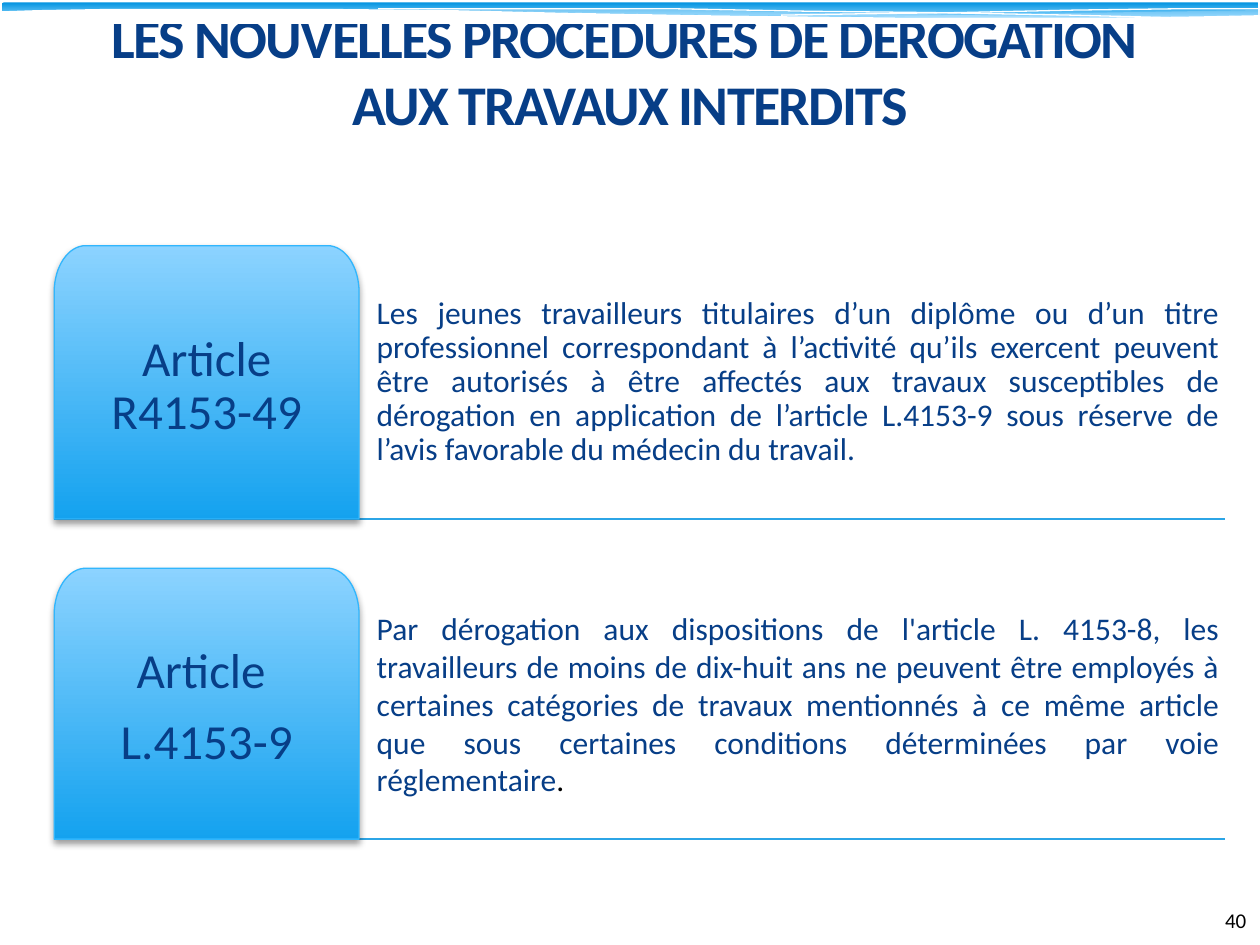
from math import cos, pi, sin

from lxml import etree
from pptx import Presentation
from pptx.dml.color import RGBColor
from pptx.enum.shapes import MSO_CONNECTOR, MSO_SHAPE
from pptx.enum.text import MSO_ANCHOR, PP_ALIGN
from pptx.oxml.ns import qn
from pptx.util import Inches, Pt

LEFT, RIGHT = Inches(0.43), Inches(9.72)
TAB_W, TEXT_X, TEXT_W = Inches(2.42), Inches(2.95), Inches(6.77)
CENTER, JUSTIFY, END = PP_ALIGN.CENTER, PP_ALIGN.JUSTIFY, PP_ALIGN.RIGHT
MIDDLE = MSO_ANCHOR.MIDDLE
ROUNDED, STRAIGHT = MSO_SHAPE.ROUNDED_RECTANGLE, MSO_CONNECTOR.STRAIGHT
NAVY, BLACK, WHITE = "073E87", "000000", "FFFFFF"
RULE, TAB_EDGE, PALE = "2CA5E6", "31B6FD", "C6E7FC"

RIBBONS = [
    ([(9.99, 0.08), (9.42, 0.09), (8.79, 0.1), (7.66, 0.12), (6.7, 0.13),
      (7.44, 0.14), (9, 0.14), (9.65, 0.13), (10, 0.12), (10, 0.08)], 29),
    ([(9.13, 0.14), (8.23, 0.13), (7.17, 0.11), (6.36, 0.1), (5.58, 0.08),
      (4.63, 0.07), (2.76, 0.07), (3.56, 0.08), (4.47, 0.1), (5.7, 0.12),
      (6.9, 0.13), (7.74, 0.14)], 40),
]
STREAKS = [
    [(3, 0.07), (5.35, 0.07), (6.43, 0.09), (7.39, 0.1), (8.48, 0.12), (9.28, 0.14)],
    [(6.2, 0.12), (6.81, 0.11), (7.6, 0.1), (8.53, 0.08), (9.31, 0.07), (9.99, 0.07)],
]
WAVE = [(10, 0.12), (9.51, 0.13), (8.8, 0.14), (7.18, 0.14), (6.32, 0.13),
        (5.57, 0.12), (4.44, 0.1), (3.58, 0.08), (2.59, 0.07), (0.87, 0.07),
        (0.3, 0.08), (0, 0.09), (0, 0.19), (10, 0.19)]

ARTICLES = [
    (1.95, 2.17, ["Article R4153-49"], 0.9, 0.35,
     [("Les jeunes travailleurs titulaires d’un diplôme ou d’un titre "
       "professionnel correspondant à l’activité qu’ils exercent peuvent être "
       "autorisés à être affectés aux travaux susceptibles de dérogation en "
       "application de l’article L.4153-9 sous réserve de l’avis favorable du "
       "médecin du travail.", NAVY)]),
    (4.51, 2.15, ["Article ", "L.4153-9"], 1.0, 0,
     [("Par dérogation aux dispositions de l'article L. 4153-8, les travailleurs "
       "de moins de dix-huit ans ne peuvent être employés à certaines catégories "
       "de travaux mentionnés à ce même article que sous certaines conditions "
       "déterminées par voie réglementaire", NAVY), (".", BLACK)]),
]


def rgb(value):
    return RGBColor.from_string(value)


class Deck:
    font = "Calibri"

    def __init__(self, prs):
        self.prs = prs
        self.s = prs.slides.add_slide(prs.slide_layouts[5])

    def run(self, p, text, size, color=NAVY, bold=False):
        r = p.add_run()
        r.text = text
        r.font.name, r.font.size, r.font.bold = self.font, Pt(size), bold
        r.font.color.rgb = rgb(color)
        return r

    def paragraphs(self, sp, paragraphs, size, align, margins, spacing=1.0, after=0):
        tf = sp.text_frame
        tf.word_wrap, tf.vertical_anchor = True, MIDDLE
        tf.margin_left, tf.margin_top, tf.margin_right, tf.margin_bottom = map(Inches, margins)
        for i, runs in enumerate(paragraphs):
            p = tf.add_paragraph() if i else tf.paragraphs[0]
            p.alignment, p.line_spacing, p.space_after = align, spacing, Pt(size * after)
            for text, color in runs:
                self.run(p, text, size, color)

    def title(self, first, second):
        sp = self.s.shapes.title
        sp.left, sp.top, sp.width, sp.height = 0, Inches(0.36), Inches(10), Inches(0.39)
        tf = sp.text_frame
        tf.word_wrap, tf.vertical_anchor = True, MIDDLE
        p = tf.paragraphs[0]
        p.alignment = CENTER
        runs = [self.run(p, first, 32, bold=True)]
        p.add_line_break()
        runs.append(self.run(p, second, 32, bold=True))
        for r in runs:
            r.font._element.set("spc", "-100")

    def text(self, x, y, w, h, *args, **kwargs):
        self.paragraphs(self.s.shapes.add_textbox(x, y, w, h), *args, **kwargs)

    def gradient(self, sp, top, bottom, end=1.0):
        sp.fill.gradient()
        sp.fill.gradient_angle = 270
        for stop, color, position in zip(sp.fill.gradient_stops, (top, bottom), (0, end)):
            stop.color.rgb, stop.position = rgb(color), position

    def outline(self, points, closed=True):
        pts = [(Inches(x), Inches(y)) for x, y in points]
        builder = self.s.shapes.build_freeform(*pts[0])
        builder.add_line_segments(pts[1:], close=closed)
        sp = builder.convert_to_shape()
        sp.shadow.inherit = False
        sp.fill.background()
        sp.line.fill.background()
        return sp

    def area(self, points, color, alpha=100):
        sp = self.outline(points)
        sp.fill.solid()
        sp.fill.fore_color.rgb = rgb(color)
        clr = sp._element.spPr.find(qn("a:solidFill"))[0]
        etree.SubElement(clr, qn("a:alpha"), val=str(alpha * 1000))

    def streak(self, points):
        sp = self.outline(points, closed=False)
        sp.line.color.rgb, sp.line.width = rgb(WHITE), Pt(0)

    def band(self):
        sp = self.s.shapes.add_shape(ROUNDED, Inches(0.02), Inches(0.02), Inches(9.97), Inches(0.13))
        sp.adjustments[0] = 0.07
        sp.shadow.inherit = False
        sp.line.fill.background()
        self.gradient(sp, "0293E0", "83D3FE", 0.9)

    def rule(self, y):
        c = self.s.shapes.add_connector(STRAIGHT, LEFT, Inches(y), RIGHT, Inches(y))
        c.line.color.rgb, c.line.width = rgb(RULE), Pt(0.75)
        etree.SubElement(c._element.spPr, qn("a:effectLst"))

    def tab(self, y, h, lines):
        x, w, rx, ry = LEFT.inches, TAB_W.inches, 0.25, 0.37
        angles = [i * pi / 32 for i in range(17)]
        left = [(x + rx - rx * cos(a), y + ry - ry * sin(a)) for a in angles]
        right = [(2 * x + w - px, py) for px, py in reversed(left)]
        sp = self.outline(left + right + [(x + w, y + h), (x, y + h)])
        self.gradient(sp, "8CD3FF", "14A2EF")
        sp.line.color.rgb, sp.line.width = rgb(TAB_EDGE), Pt(0.75)
        effects = sp._element.spPr.find(qn("a:effectLst"))
        shadow = etree.SubElement(effects, qn("a:outerShdw"), blurRad=str(Pt(4)),
                                  dist=str(Pt(2)), dir="5400000", rotWithShape="0")
        clr = etree.SubElement(shadow, qn("a:srgbClr"), val=BLACK)
        etree.SubElement(clr, qn("a:alpha"), val="38000")
        self.paragraphs(sp, [[(line, NAVY)] for line in lines], 28, CENTER,
                        (0.13, 0.13, 0.13, 0.06), 0.9, 0.35)


def main():
    prs = Presentation()
    prs.slide_width, prs.slide_height = Inches(10), Inches(7.5)
    deck = Deck(prs)
    deck.band()
    for points, alpha in RIBBONS:
        deck.area(points, PALE, alpha)
    for points in STREAKS:
        deck.streak(points)
    deck.area(WAVE, WHITE)
    deck.text(Inches(7.66), Inches(7.1), Inches(2.33), Inches(0.4),
              [[("40", BLACK)]], 12, END, (0.1, 0.05, 0.1, 0.05))
    for y, h, heading, spacing, after, body in ARTICLES:
        deck.rule(y + h)
        deck.text(TEXT_X, Inches(y), TEXT_W, Inches(h), [body], 18, JUSTIFY,
                  (0.04,) * 4, spacing, after)
        deck.tab(y, h, heading)
    deck.title("LES NOUVELLES PROCÉDURES DE DÉROGATION ", "AUX TRAVAUX INTERDITS")
    prs.save("out.pptx")


if __name__ == "__main__":
    main()
